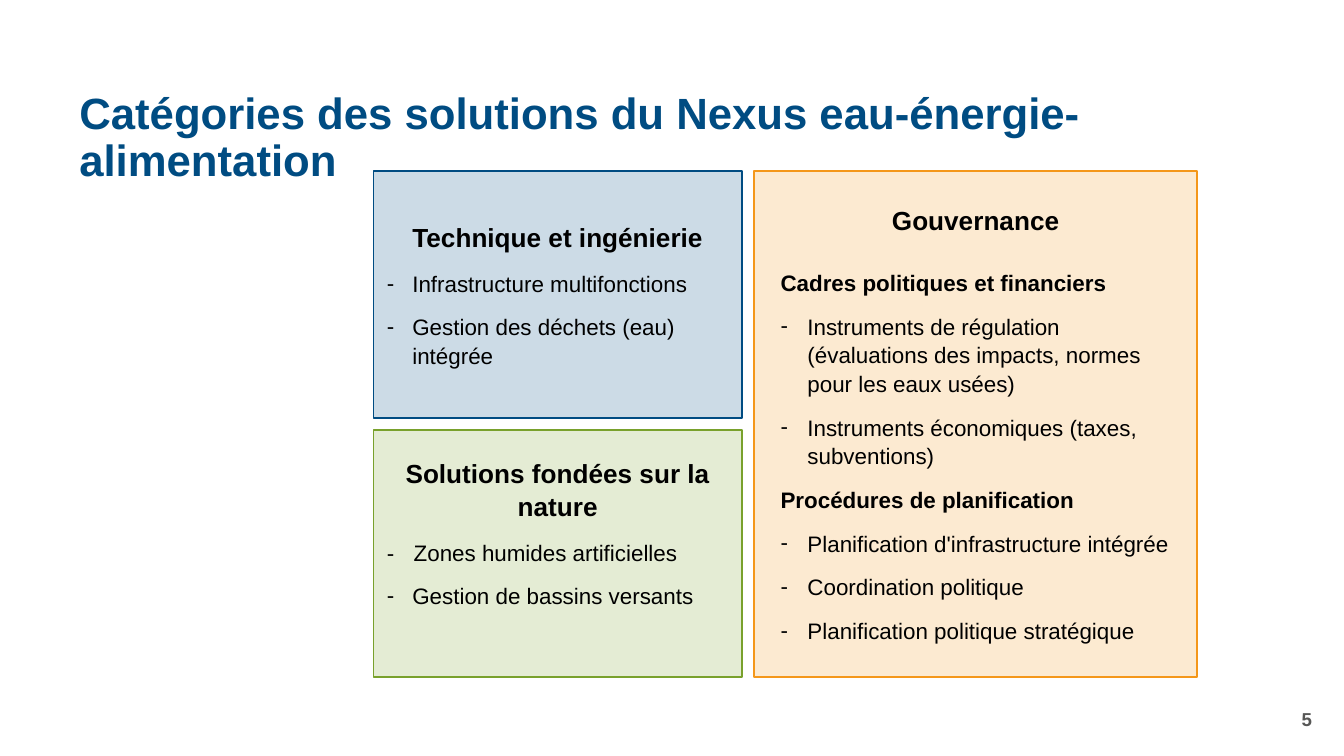
from dataclasses import dataclass

from lxml.etree import SubElement
from pptx import Presentation
from pptx.dml.color import RGBColor
from pptx.enum.shapes import MSO_SHAPE as Shape
from pptx.enum.text import MSO_ANCHOR as Anchor, MSO_AUTO_SIZE as AutoSize, PP_ALIGN as Align
from pptx.oxml.ns import qn
from pptx.util import Inches, Pt


@dataclass(frozen=True)
class Theme:
    font: str = "Arial"
    black: str = "000000"
    blue: str = "004C82"
    green: str = "79A12C"
    orange: str = "F4971A"
    grey: str = "575756"
    title_size: float = 23.4
    heading_size: float = 14
    body_size: float = 12
    number_size: float = 10
    fill_opacity: int = 20


THEME = Theme()
LEFT, TOP, BOTTOM, GAP = 2.78, 1.27, 5.04, 0.09
NARROW, WIDE = 2.74, 3.3
HALF = (BOTTOM - TOP - GAP) / 2


def style(paragraph, size, color=THEME.black, bold=False, align=Align.LEFT):
    paragraph.alignment = align
    font = paragraph.font
    font.name, font.size, font.bold = THEME.font, Pt(size), bold
    font.color.rgb = RGBColor.from_string(color)


def place(shape, left, top, width, height):
    shape.left, shape.top = Inches(left), Inches(top)
    shape.width, shape.height = Inches(width), Inches(height)


def indent(paragraph, margin, hanging, bullet):
    properties = paragraph._p.get_or_add_pPr()
    properties.set("marL", str(Inches(margin)))
    properties.set("indent", str(-Inches(hanging)))
    if bullet:
        SubElement(properties, qn("a:buFont")).set("typeface", THEME.font)
        SubElement(properties, qn("a:buChar")).set("char", "-")


def add_title(slide, text):
    title = slide.shapes.title
    place(title, 0.49, 0.74, 9.37, 0.59)
    frame = title.text_frame
    frame.text = text
    frame.auto_size = AutoSize.NONE
    frame.vertical_anchor = Anchor.MIDDLE
    paragraph = frame.paragraphs[0]
    paragraph.line_spacing = 0.9
    style(paragraph, THEME.title_size, THEME.blue, bold=True)


def add_panel(slide, box, color, heading):
    panel = slide.shapes.add_shape(Shape.RECTANGLE, *map(Inches, box))
    panel.shadow.inherit = False
    panel.fill.solid()
    panel.fill.fore_color.rgb = RGBColor.from_string(color)
    color_element = panel.fill._xPr.find(qn("a:solidFill"))[0]
    SubElement(color_element, qn("a:alpha")).set("val", str(THEME.fill_opacity * 1000))
    panel.line.color.rgb = RGBColor.from_string(color)
    panel.line.width = Pt(1)
    frame = panel.text_frame
    frame.word_wrap = True
    frame.vertical_anchor = Anchor.MIDDLE
    paragraph = frame.paragraphs[0]
    paragraph.text = heading
    paragraph.line_spacing = 1.07
    paragraph.space_after = Pt(8)
    style(paragraph, THEME.heading_size, bold=True, align=Align.CENTER)
    return frame


def add_entry(frame, text, margin=0.19, hanging=0.19, bullet=True, bold=False):
    paragraph = frame.add_paragraph()
    paragraph.text = text
    paragraph.line_spacing = 1.07
    paragraph.space_after = Pt(8)
    indent(paragraph, margin, hanging, bullet)
    style(paragraph, THEME.body_size, bold=bold)


def add_section(frame, heading, entries):
    add_entry(frame, heading, 0.3, 0.2, bullet=False, bold=True)
    for entry in entries:
        add_entry(frame, entry, 0.3, 0.2)


def add_page_number(slide, number):
    box = slide.shapes.add_textbox(*map(Inches, (7.61, 5.2, 2.25, 0.3)))
    frame = box.text_frame
    frame.word_wrap = True
    frame.vertical_anchor = Anchor.MIDDLE
    frame.text = number
    style(frame.paragraphs[0], THEME.number_size, THEME.grey, True, Align.RIGHT)


def main():
    presentation = Presentation()
    presentation.slide_width = Inches(10)
    presentation.slide_height = Inches(10 * 9 / 16)
    slide = presentation.slides.add_slide(presentation.slide_layouts[5])
    add_title(slide, "Catégories des solutions du Nexus eau-énergie-alimentation")

    governance = add_panel(slide, (LEFT + NARROW + GAP, TOP, WIDE, BOTTOM - TOP),
                           THEME.orange, "Gouvernance")
    governance.paragraphs[0].line_spacing = 1.0
    governance.paragraphs[0].space_after = Pt(17)
    add_section(governance, "Cadres politiques et financiers", [
        "Instruments de régulation (évaluations des impacts, normes pour les eaux usées)",
        "Instruments économiques (taxes, subventions)",
    ])
    add_section(governance, "Procédures de planification", [
        "Planification d'infrastructure intégrée",
        "Coordination politique",
        "Planification politique stratégique",
    ])

    engineering = add_panel(slide, (LEFT, TOP, NARROW, HALF), THEME.blue,
                            "Technique et ingénierie")
    for entry in ("Infrastructure multifonctions", "Gestion des déchets (eau) intégrée"):
        add_entry(engineering, entry)

    nature = add_panel(slide, (LEFT, TOP + HALF + GAP, NARROW, HALF), THEME.green,
                       "Solutions fondées sur la nature")
    nature.margin_bottom = Inches(0.37)
    add_entry(nature, "-\tZones humides artificielles", 0.2, 0.2, bullet=False)
    add_entry(nature, "Gestion de bassins versants")

    add_page_number(slide, "5")
    presentation.save("out.pptx")


if __name__ == "__main__":
    main()
